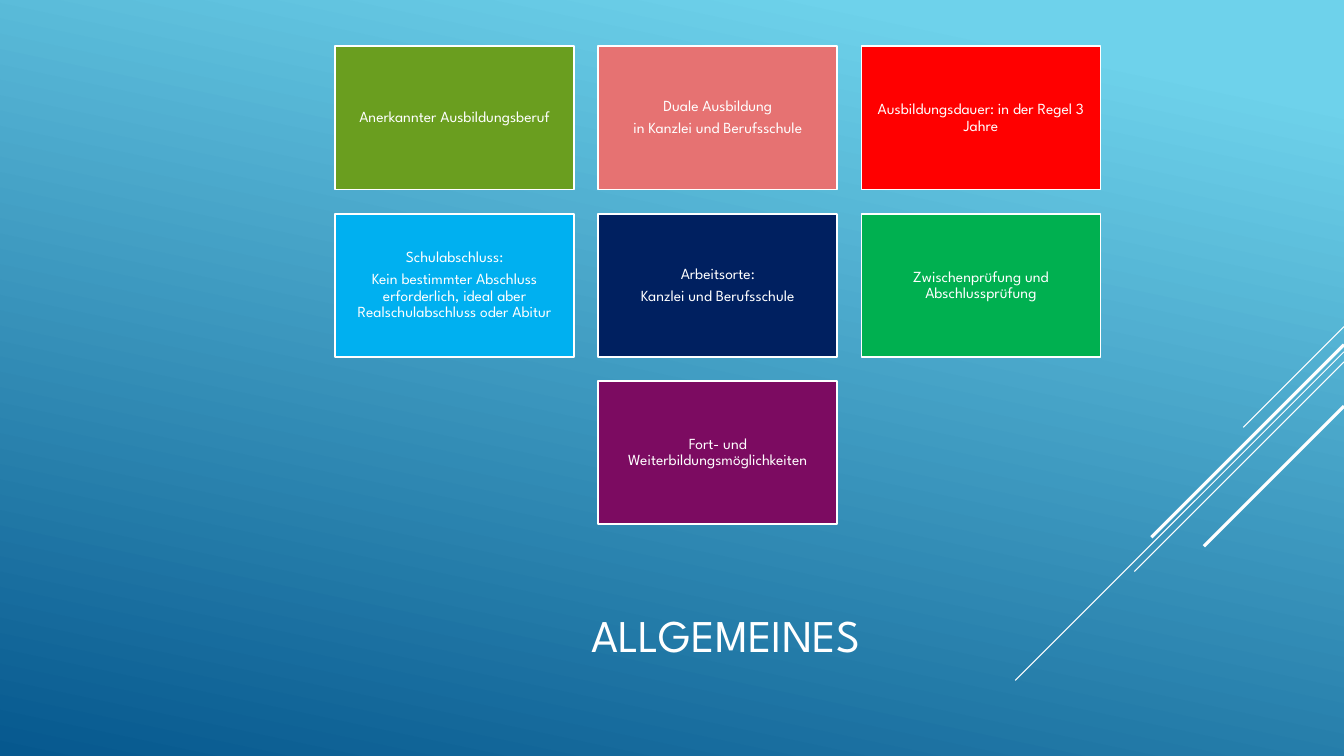
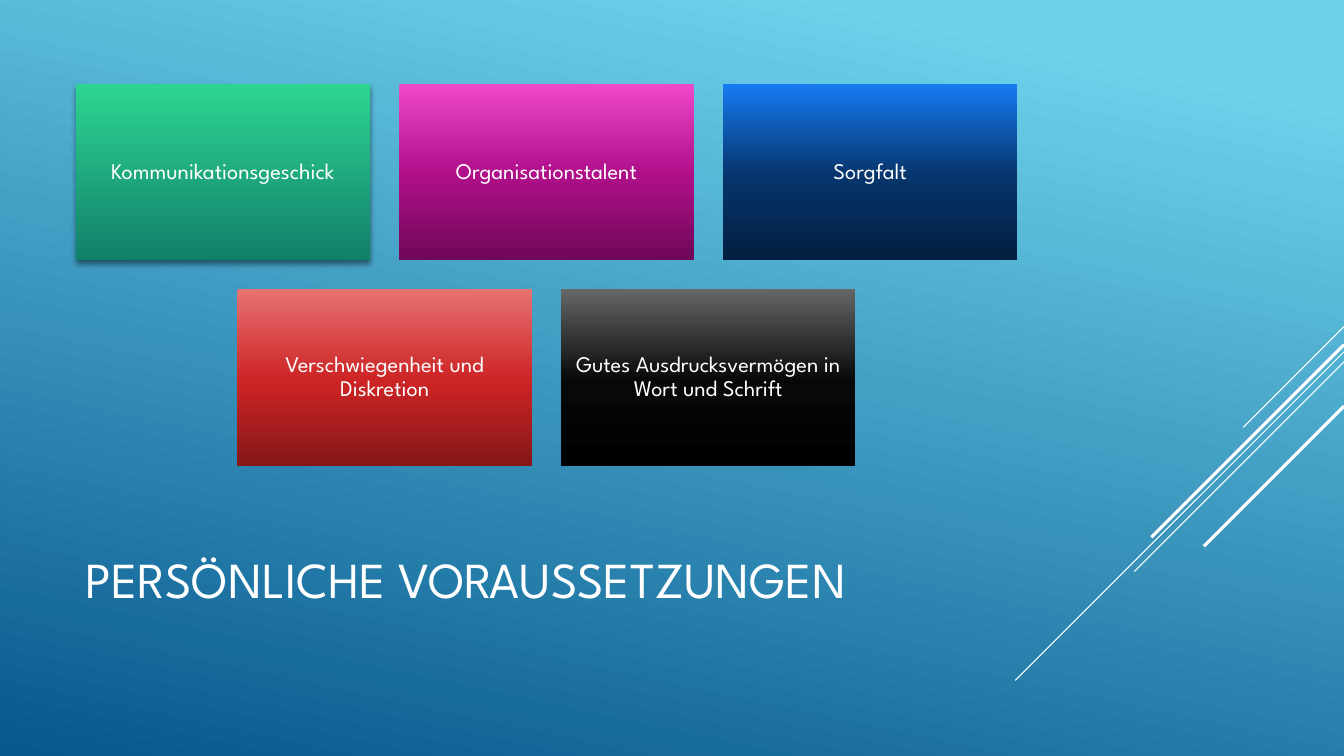
from dataclasses import dataclass

from lxml import etree
from pptx import Presentation
from pptx import util as u
from pptx.dml.color import RGBColor
from pptx.enum import shapes, text
from pptx.oxml import ns


@dataclass(frozen=True)
class Theme:
    font: str = "League Spartan"
    white: str = "FFFFFF"
    shadow: str = "000000"
    background: tuple = ((10, "6ED2EB"), (100, "06588E"))
    background_angle: int = 102
    green: str = "6A9E1F"
    coral: str = "E67272"
    red: str = "FF0000"
    sky: str = "00B0F0"
    navy: str = "002060"
    emerald: str = "00B050"
    plum: str = "7C0B61"
    mint_fade: tuple = ((0, "2ED592"), (100, "11806A"))
    pink_fade: tuple = ((0, "EF48C9"), (52, "AE0F89"), (100, "6F0957"))
    blue_fade: tuple = ((0, "167BF3"), (52, "06356D"), (100, "031F41"))
    red_fade: tuple = ((0, "E67272"), (52, "CD2425"), (100, "851718"))
    black_fade: tuple = ((0, "666666"), (52, "080808"), (100, "000000"))
    small_title: float = 32.4
    large_title: float = 36
    small_card: float = 11
    large_card: float = 16
    thin: float = 0.75
    border: float = 1.25
    thick: float = 2.25


@dataclass(frozen=True)
class CardGrid:
    """Rows of equal cards, each row centred on the same axis."""
    center: float
    top: float
    width: float
    height: float
    gap: float

    def boxes(self, rows):
        for row, cards in enumerate(rows):
            row_width = len(cards) * (self.width + self.gap) - self.gap
            left = self.center - row_width / 2
            top = self.top + row * (self.height + self.gap)
            for column, card in enumerate(cards):
                yield card, (left + column * (self.width + self.gap), top,
                             self.width, self.height)


SLIDE_WIDTH, SLIDE_HEIGHT = 13.33, 7.5


class Deck:
    def __init__(self, theme):
        self.theme = theme
        self.presentation = Presentation()
        self.presentation.slide_width = u.Inches(SLIDE_WIDTH)
        self.presentation.slide_height = u.Inches(SLIDE_HEIGHT)
        self.slide = None
        master = self.presentation.slide_master
        self.gradient(master.background.fill, master.element,
                      theme.background, theme.background_angle)

    def add_slide(self):
        self.slide = self.presentation.slides.add_slide(
            self.presentation.slide_layouts[6])
        self.diagonals()

    def diagonals(self):
        """Draw the 45-degree lines that run in from the right edge."""
        thin, thick = self.theme.thin, self.theme.thick
        for top, length, weight in ((3.24, 1, thin), (3.49, 3.26, thin),
                                    (3.59, 2.08, thin), (3.42, 1.91, thick),
                                    (4.03, 1.39, thick)):
            line = self.slide.shapes.add_connector(
                shapes.MSO_CONNECTOR.STRAIGHT,
                u.Inches(SLIDE_WIDTH), u.Inches(top),
                u.Inches(SLIDE_WIDTH - length), u.Inches(top + length))
            line.line.color.rgb = RGBColor.from_string(self.theme.white)
            line.line.width = u.Pt(weight)
            etree.SubElement(line.element.spPr, ns.qn("a:effectLst"))

    def gradient(self, fill, element, stops, angle=90):
        """Fill with (percent, colour) stops; the angle runs clockwise."""
        fill.gradient()
        fill.gradient_angle = 360 - angle
        stop_list = element.find(".//" + ns.qn("a:gsLst"))
        for stop in list(stop_list):
            stop_list.remove(stop)
        for percent, color in stops:
            stop = etree.SubElement(stop_list, ns.qn("a:gs"), pos=str(percent * 1000))
            etree.SubElement(stop, ns.qn("a:srgbClr"), val=color)

    def drop_shadow(self, shape):
        effects = shape.element.spPr.find(ns.qn("a:effectLst"))
        shadow = etree.SubElement(
            effects, ns.qn("a:outerShdw"), blurRad=str(u.Pt(4)),
            dist=str(u.Pt(3)), dir="5400000", algn="ctr", rotWithShape="0")
        color = etree.SubElement(shadow, ns.qn("a:srgbClr"), val=self.theme.shadow)
        etree.SubElement(color, ns.qn("a:alpha"), val="46000")

    def add_text(self, shape, lines, size, align):
        frame = shape.text_frame
        frame.word_wrap = True
        frame.vertical_anchor = text.MSO_ANCHOR.MIDDLE
        for index, line in enumerate(lines):
            paragraph = frame.add_paragraph() if index else frame.paragraphs[0]
            paragraph.alignment = align
            run = paragraph.add_run()
            run.text = line
            run.font.name = self.theme.font
            run.font.size = u.Pt(size)
            run.font.color.rgb = RGBColor.from_string(self.theme.white)
        return frame

    def title(self, line, box, size, align=text.PP_ALIGN.LEFT):
        shape = self.slide.shapes.add_textbox(*map(u.Inches, box))
        self.add_text(shape, [line], size, align)

    def card(self, lines, box, fill, size, inset, border=False, shadow=False):
        shape = self.slide.shapes.add_shape(
            shapes.MSO_SHAPE.RECTANGLE, *map(u.Inches, box))
        shape.shadow.inherit = False
        if isinstance(fill, str):
            shape.fill.solid()
            shape.fill.fore_color.rgb = RGBColor.from_string(fill)
        else:
            self.gradient(shape.fill, shape.element, fill)
        if border:
            shape.line.color.rgb = RGBColor.from_string(self.theme.white)
            shape.line.width = u.Pt(self.theme.border)
        else:
            shape.line.fill.background()
        if shadow:
            self.drop_shadow(shape)
        frame = self.add_text(shape, lines, size, text.PP_ALIGN.CENTER)
        frame.margin_left = frame.margin_right = u.Inches(inset)
        frame.margin_top = frame.margin_bottom = u.Inches(inset)
        for paragraph in frame.paragraphs:
            paragraph.line_spacing = 0.9
            paragraph.space_after = u.Pt(round(0.35 * size, 1))


def general_slide(deck):
    theme = deck.theme
    deck.add_slide()
    deck.title("ALLGEMEINES", (1.7, 6.03, 11, 0.52), theme.small_title,
               text.PP_ALIGN.CENTER)
    rows = (
        ((theme.green, ["Anerkannter Ausbildungsberuf"]),
         (theme.coral, ["Duale Ausbildung", "in Kanzlei und Berufsschule"]),
         (theme.red, ["Ausbildungsdauer: in der Regel 3 Jahre"])),
        ((theme.sky, ["Schulabschluss:",
                      "Kein bestimmter Abschluss erforderlich, ideal aber "
                      "Realschulabschluss oder Abitur"]),
         (theme.navy, ["Arbeitsorte:", "Kanzlei und Berufsschule"]),
         (theme.emerald, ["Zwischenprüfung und Abschlussprüfung"])),
        ((theme.plum, ["Fort- und Weiterbildungsmöglichkeiten"]),),
    )
    grid = CardGrid(center=7.12, top=0.46, width=2.37, height=1.42, gap=0.24)
    for (fill, lines), box in grid.boxes(rows):
        deck.card(lines, box, fill, theme.small_card, 0.05, border=True)


def requirements_slide(deck):
    theme = deck.theme
    deck.add_slide()
    deck.title("PERSÖNLICHE VORAUSSETZUNGEN", (0.75, 4.91, 9.33, 1.65),
               theme.large_title)
    rows = (
        ((theme.mint_fade, "Kommunikationsgeschick"),
         (theme.pink_fade, "Organisationstalent"),
         (theme.blue_fade, "Sorgfalt")),
        ((theme.red_fade, "Verschwiegenheit und Diskretion"),
         (theme.black_fade, "Gutes Ausdrucksvermögen in Wort und Schrift")),
    )
    grid = CardGrid(center=5.42, top=0.83, width=2.92, height=1.75, gap=0.29)
    for (fill, line), box in grid.boxes(rows):
        deck.card([line], box, fill, theme.large_card, 0.07,
                  shadow=fill == theme.mint_fade)


def main():
    deck = Deck(Theme())
    general_slide(deck)
    requirements_slide(deck)
    deck.presentation.save("out.pptx")


if __name__ == "__main__":
    main()
